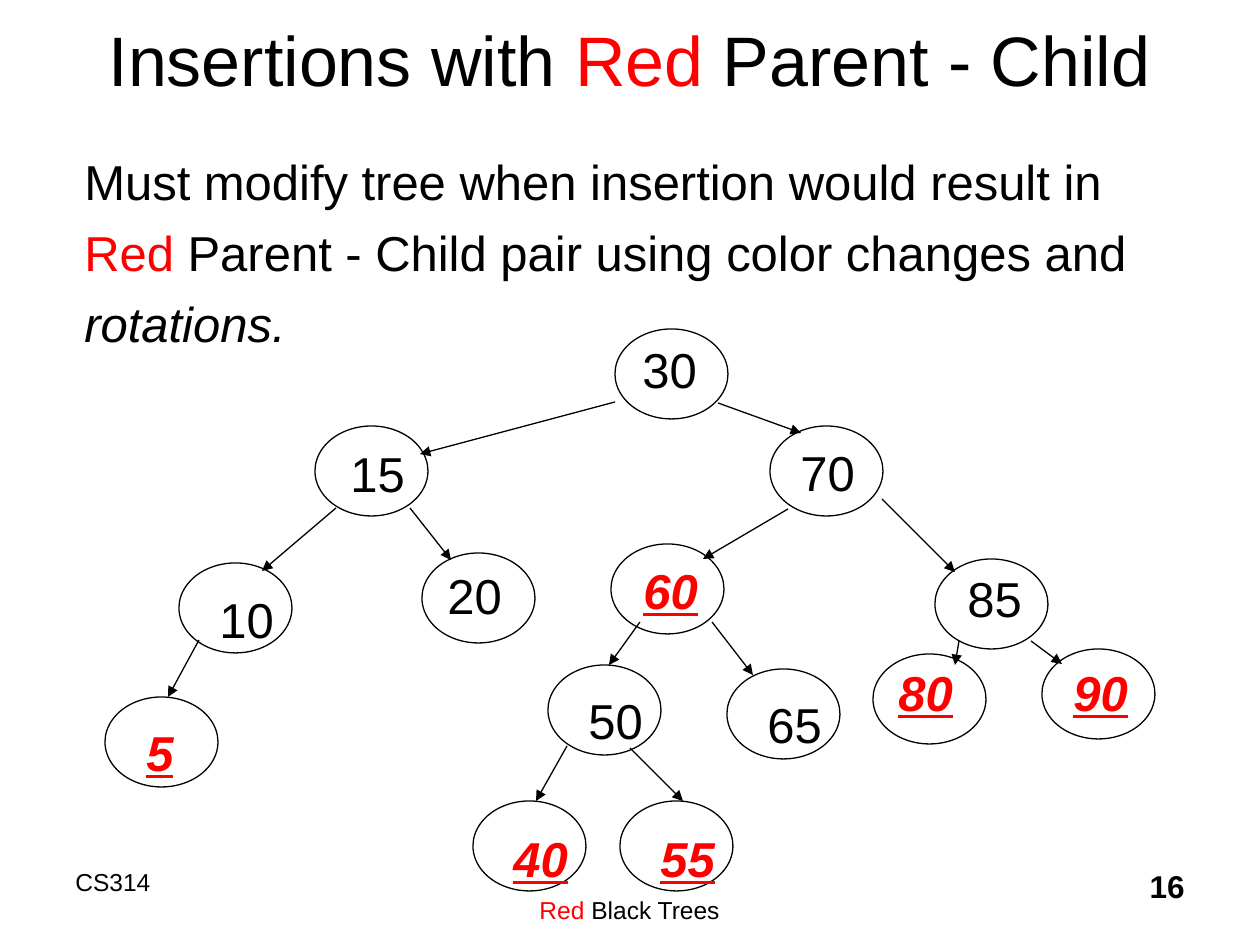
from lxml.etree import SubElement
from pptx import Presentation
from pptx.dml.color import RGBColor
from pptx.enum.shapes import MSO_CONNECTOR, MSO_SHAPE
from pptx.enum.text import MSO_ANCHOR, PP_ALIGN
from pptx.oxml.ns import qn
from pptx.util import Pt

SCALE = 914400 / 126
BLACK, RED = "000000", "FF0000"
NODES = [
    ("30", (615, 329), (630, 333), BLACK),
    ("15", (315, 426), (338, 437), BLACK),
    ("70", (770, 426), (788, 436), BLACK),
    ("10", (179, 563), (207, 583), BLACK),
    ("20", (422, 553), (435, 559), BLACK),
    ("60", (611, 544), (631, 554), RED),
    ("85", (935, 559), (955, 562), BLACK),
    ("5", (105, 697), (134, 716), RED),
    ("50", (548, 665), (576, 684), BLACK),
    ("65", (727, 669), (755, 688), BLACK),
    ("80", (873, 654), (886, 656), RED),
    ("90", (1042, 649), (1061, 656), RED),
    ("40", (473, 801), (501, 822), RED),
    ("55", (620, 801), (648, 822), RED),
]
EDGES = [
    (615, 402, 420, 454), (718, 403, 801, 433),
    (336, 508, 262, 571), (410, 508, 451, 560),
    (788, 509, 703, 559), (882, 499, 955, 572),
    (199, 640, 168, 697), (640, 622, 609, 665),
    (712, 622, 753, 675), (959, 641, 955, 665),
    (1031, 641, 1062, 664), (567, 746, 536, 801),
    (630, 748, 683, 801),
]


def px(*nums):
    """Turn pixel lengths into EMU."""
    return [round(num * SCALE) for num in nums]


def tint(code):
    """Make a colour from a hex string."""
    return RGBColor.from_string(code)


def style(run, size, color, bold=False, slant=False, under=False):
    """Set the font of a run."""
    font = run.font
    font.name, font.size = "Arial", Pt(size)
    font.bold, font.italic, font.underline = bold, slant, under
    font.color.rgb = tint(color)


def text(slide, box, lines, size=28, color=BLACK, align=PP_ALIGN.LEFT,
         anchor=MSO_ANCHOR.TOP, wrap=True, first=0, gap=0, **marks):
    """Add a text box in which the word Red is always red."""
    frame = slide.shapes.add_textbox(*px(*box)).text_frame
    frame.word_wrap, frame.vertical_anchor = wrap, anchor
    for row, line in enumerate(lines):
        para = frame.add_paragraph() if row else frame.paragraphs[0]
        para.alignment = align
        para.space_before = Pt(gap if row else first)
        for part in filter(None, line.partition("Red")):
            run = para.add_run()
            run.text = part
            style(run, size, RED if part == "Red" else color, **marks)
    return frame


def node(slide, key, spot, label, color):
    """Add an oval tree node and its key."""
    oval = slide.shapes.add_shape(MSO_SHAPE.OVAL, *px(*spot, 113, 90))
    oval.shadow.inherit = False
    oval.fill.background()
    oval.line.color.rgb = tint(BLACK)
    oval.line.width = Pt(0.75)
    mark = color == RED
    width = 25 + 28 * len(key)
    text(slide, (*label, width, 72), [key], color=color, wrap=False, first=3,
         bold=mark, slant=mark, under=mark)


def edge(slide, ends):
    """Add an arrow from parent to child."""
    line = slide.shapes.add_connector(MSO_CONNECTOR.STRAIGHT, *px(*ends))
    line.line.color.rgb = tint(BLACK)
    line.line.width = Pt(0.75)
    SubElement(line.line._get_or_add_ln(), qn("a:tailEnd"), type="triangle")
    SubElement(line._element.spPr, qn("a:effectLst"))


def main():
    """Build and save the slide."""
    deck = Presentation()
    deck.slide_width, deck.slide_height = px(1260, 945)
    slide = deck.slides.add_slide(deck.slide_layouts[6])
    text(slide, (94, -21, 1071, 158), ["Insertions with Red Parent - Child"],
         size=40, align=PP_ALIGN.CENTER, anchor=MSO_ANCHOR.MIDDLE)
    body = text(slide, (72, 145, 1071, 213), [
        "Must modify tree when insertion would result in",
        "Red Parent - Child pair using color changes and",
        "rotations.",
    ], wrap=False, first=3, gap=7)
    body.paragraphs[-1].runs[0].font.italic = True
    for item in NODES:
        node(slide, *item)
    for ends in EDGES:
        edge(slide, ends)
    text(slide, (63, 861, 315, 63), ["CS314"], size=14)
    text(slide, (388, 889, 483, 35), ["Red Black Trees"], size=14,
         align=PP_ALIGN.CENTER)
    text(slide, (935, 861, 262, 63), ["16"], size=18, align=PP_ALIGN.RIGHT,
         bold=True)
    deck.save("out.pptx")


if __name__ == "__main__":
    main()
